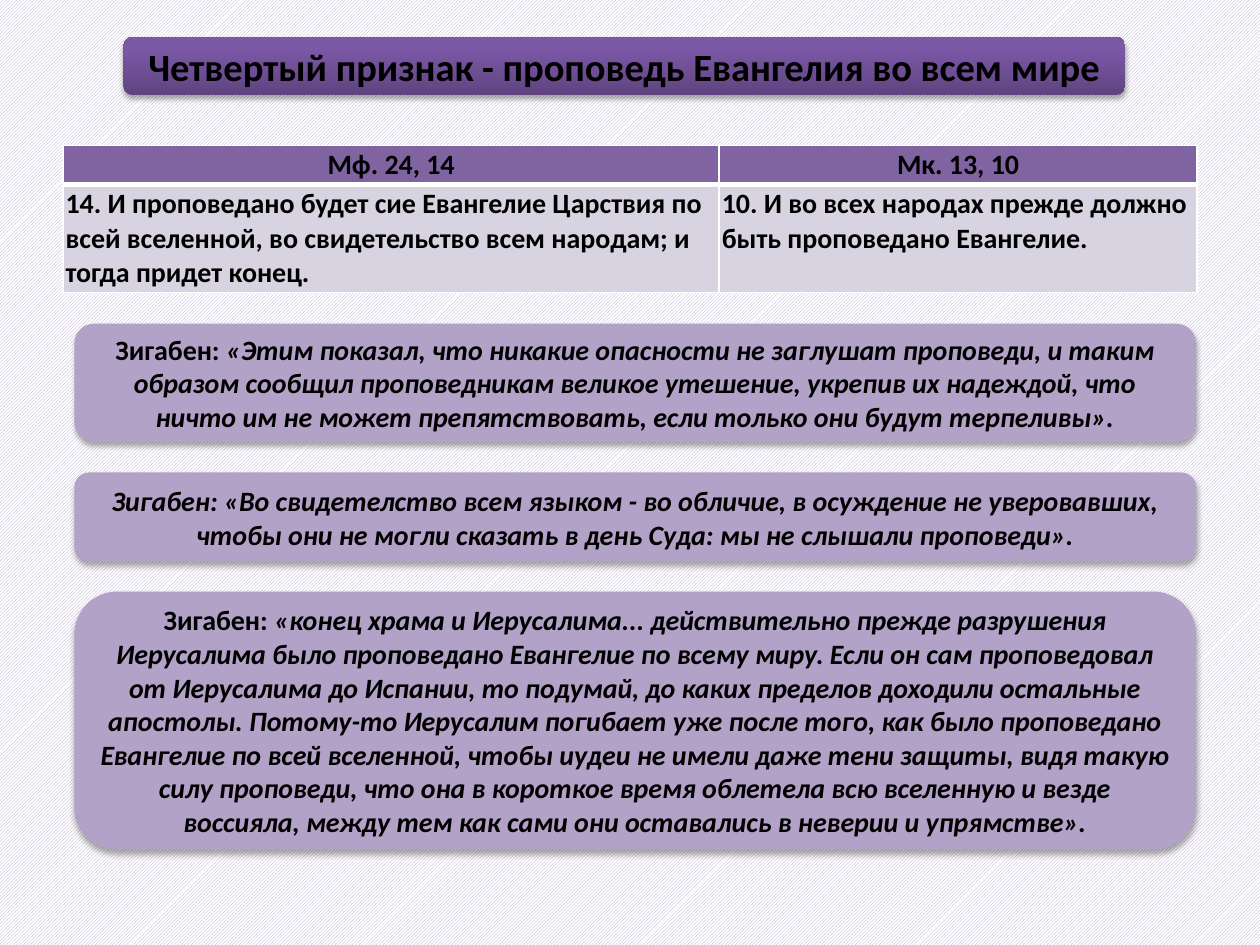
from copy import deepcopy
from dataclasses import dataclass

from pptx import Presentation
from pptx.dml.color import RGBColor
from pptx.enum.dml import MSO_PATTERN
from pptx.enum.shapes import MSO_SHAPE
from pptx.enum.text import MSO_ANCHOR, PP_ALIGN
from pptx.oxml import parse_xml
from pptx.oxml.ns import nsdecls
from pptx.util import Pt


@dataclass(frozen=True)
class Theme:
    """Colours and type sizes of the slide."""
    font: str = "Calibri"
    title_size: int = 22
    body_size: int = 16
    ink: str = "000000"
    paper: str = "FFFFFF"
    lilac: str = "B3A2C7"
    header: str = "8064A2"
    cell: str = "D8D3E0"
    title_stops: tuple = ((0, "5F4480"), (0.8, "7B58A6"), (1, "7C57A8"))


THEME = Theme()

VERSES = (
    ("Мф. 24, 14", "Мк. 13, 10"),
    ("14. И проповедано будет сие Евангелие Царствия по всей вселенной, во свидетельство "
     "всем народам; и тогда придет конец.",
     "10. И во всех народах прежде должно быть проповедано Евангелие."),
)

COMMENTS = (
    (185, 67.5, "Зигабен: ",
     "«Этим показал, что никакие опасности не заглушат проповеди, и таким образом сообщил "
     "проповедникам великое утешение, укрепив их надеждой, что ничто им не может "
     "препятствовать, если только они будут терпеливы»."),
    (270, 51, "",
     "Зигабен: «Во свидетелство всем языком - во обличие, в осуждение не уверовавших, чтобы "
     "они не могли сказать в день Суда: мы не слышали проповеди»."),
    (338, 147.5, "Зигабен: ",
     "«конец храма и Иерусалима... действительно прежде разрушения Иерусалима было "
     "проповедано Евангелие по всему миру. Если он сам проповедовал от Иерусалима до "
     "Испании, то подумай, до каких пределов доходили остальные апостолы. Потому-то "
     "Иерусалим погибает уже после того, как было проповедано Евангелие по всей вселенной, "
     "чтобы иудеи не имели даже тени защиты, видя такую силу проповеди, что она в короткое "
     "время облетела всю вселенную и везде воссияла, между тем как сами они оставались в "
     "неверии и упрямстве»."),
)


def rgb(colour):
    """Turn a hex string into a colour."""
    return RGBColor.from_string(colour)


def style_paragraph(paragraph, size, align):
    """Set the common bold type and the alignment of a paragraph."""
    paragraph.alignment = align
    paragraph.font.name = THEME.font
    paragraph.font.size = Pt(size)
    paragraph.font.bold = True
    paragraph.font.color.rgb = rgb(THEME.ink)


def add_shadow(shape, blur, distance, opacity):
    """Give a shape a soft shadow that falls straight down."""
    shape.shadow.inherit = False
    effects = shape._element.spPr.find("{*}effectLst")
    effects.append(parse_xml(
        f'<a:outerShdw {nsdecls("a")} blurRad="{Pt(blur)}" dist="{Pt(distance)}" '
        f'dir="5400000" rotWithShape="0"><a:srgbClr val="{THEME.ink}">'
        f'<a:alpha val="{opacity * 1000}"/></a:srgbClr></a:outerShdw>'))


def add_panel(slide, box, size):
    """Add a rounded panel and return it with its centred paragraph."""
    panel = slide.shapes.add_shape(MSO_SHAPE.ROUNDED_RECTANGLE, *map(Pt, box))
    panel.line.fill.background()
    panel.text_frame.word_wrap = True
    panel.text_frame.vertical_anchor = MSO_ANCHOR.MIDDLE
    paragraph = panel.text_frame.paragraphs[0]
    style_paragraph(paragraph, size, PP_ALIGN.CENTER)
    return panel, paragraph


def add_title(slide, box, title):
    """Add the title panel with its purple gradient."""
    panel, paragraph = add_panel(slide, box, THEME.title_size)
    paragraph.add_run().text = title
    panel.fill.gradient()
    panel.fill.gradient_angle = 90
    stop_list = panel._element.spPr.find(".//{*}gsLst")
    stop_list.insert(1, deepcopy(stop_list[0]))
    for stop, (position, colour) in zip(panel.fill.gradient_stops, THEME.title_stops):
        stop.position = position
        stop.color.rgb = rgb(colour)
    add_shadow(panel, 3.1, 1.8, 35)


def add_comment(slide, box, speaker, quote):
    """Add a commentary panel with an upright speaker and an italic quote."""
    panel, paragraph = add_panel(slide, box, THEME.body_size)
    panel.fill.solid()
    panel.fill.fore_color.rgb = rgb(THEME.lilac)
    if speaker:
        paragraph.add_run().text = speaker
    quotation = paragraph.add_run()
    quotation.text = quote
    quotation.font.italic = True
    add_shadow(panel, 3.5, 2.2, 32)


def set_borders(cell, widths):
    """Draw white cell borders with the given width for each side."""
    properties = cell._tc.get_or_add_tcPr()
    for index, (side, width) in enumerate(widths.items()):
        properties.insert(index, parse_xml(
            f'<a:ln{side} {nsdecls("a")} w="{Pt(width)}"><a:solidFill>'
            f'<a:srgbClr val="{THEME.paper}"/></a:solidFill></a:ln{side}>'))


def add_verses(slide, box, column_widths, row_heights):
    """Add the table that sets the parallel verses side by side."""
    table = slide.shapes.add_table(
        len(VERSES), len(column_widths), *map(Pt, box)).table
    for column, width in zip(table.columns, column_widths):
        column.width = Pt(width)
    row_styles = (
        (THEME.header, PP_ALIGN.CENTER, {"L": 1, "R": 1, "T": 1, "B": 3}),
        (THEME.cell, PP_ALIGN.LEFT, {"L": 1, "R": 1, "T": 3, "B": 1}),
    )
    for row, height, verses, style in zip(table.rows, row_heights, VERSES, row_styles):
        fill, align, borders = style
        row.height = Pt(height)
        for cell, verse in zip(row.cells, verses):
            cell.text = verse
            cell.margin_left = cell.margin_right = Pt(1.5)
            cell.margin_top = cell.margin_bottom = Pt(1.5)
            style_paragraph(cell.text_frame.paragraphs[0], THEME.body_size, align)
            set_borders(cell, borders)
            cell.fill.solid()
            cell.fill.fore_color.rgb = rgb(fill)


def paint_background(slide):
    """Cover the slide with fine lilac diagonals."""
    fill = slide.background.fill
    fill.patterned()
    fill.pattern = MSO_PATTERN.LIGHT_UPWARD_DIAGONAL
    fill.fore_color.rgb = rgb(THEME.lilac)
    fill.back_color.rgb = rgb(THEME.paper)


def main():
    """Build the slide and save it."""
    deck = Presentation()
    deck.slide_width, deck.slide_height = Pt(720), Pt(540)
    slide = deck.slides.add_slide(deck.slide_layouts[6])
    paint_background(slide)
    add_verses(slide, (36, 83, 648, 83), (375, 273), (22, 61))
    add_title(slide, (70.5, 21, 572.5, 33.5),
              "Четвертый признак - проповедь Евангелия во всем мире")
    for top, height, speaker, quote in COMMENTS:
        add_comment(slide, (42.5, top, 641, height), speaker, quote)
    deck.save("out.pptx")


if __name__ == "__main__":
    main()
